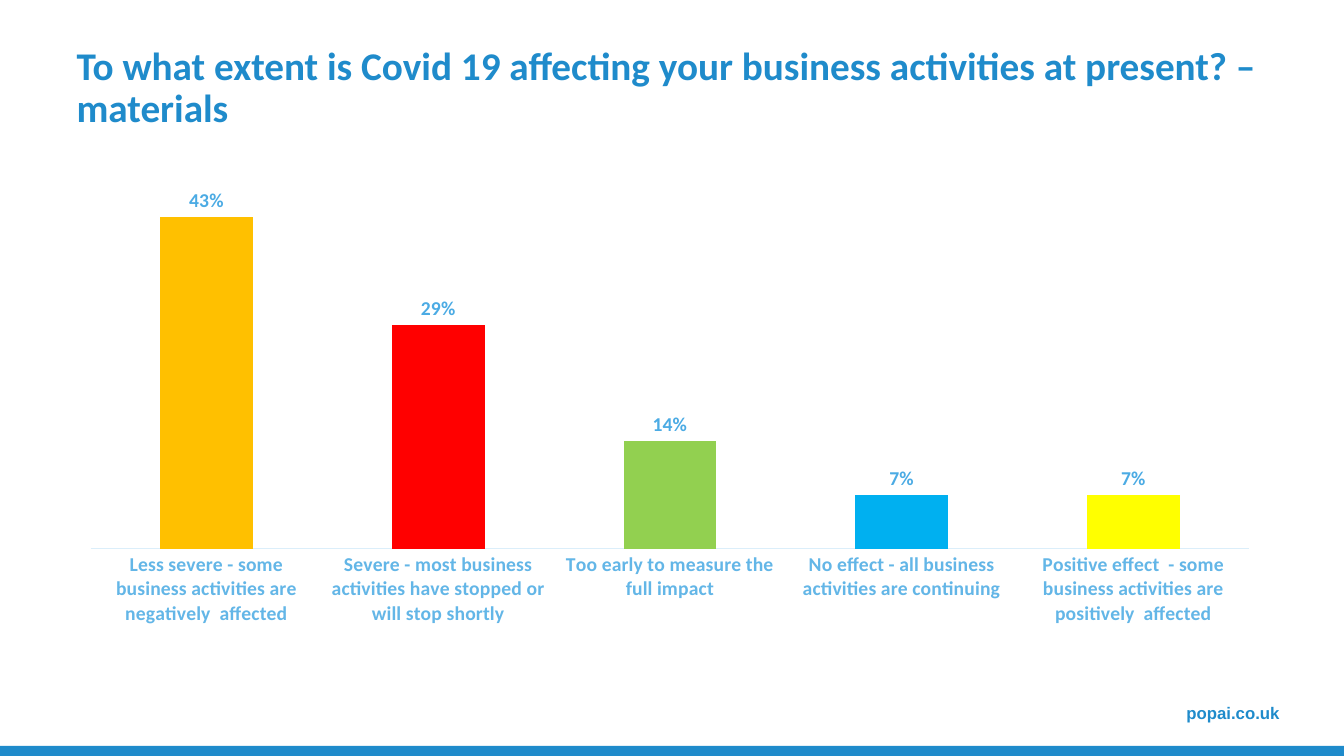
"""Build the slide on how Covid 19 affects business activities."""
from pptx import Presentation
from pptx.chart.data import CategoryChartData
from pptx.dml.color import RGBColor
from pptx.enum.chart import XL_CHART_TYPE, XL_LABEL_POSITION, XL_TICK_MARK
from pptx.enum.shapes import MSO_SHAPE
from pptx.enum.text import MSO_ANCHOR, PP_ALIGN
from pptx.util import Inches, Pt

TITLE = "To what extent is Covid 19 affecting your business activities at present? – materials"
SITE = "popai.co.uk"
DATA = [
    ("Less severe - some business activities are negatively  affected", 0.43, "amber"),
    ("Severe - most business activities have stopped or will stop shortly", 0.29, "red"),
    ("Too early to measure the full impact", 0.14, "green"),
    ("No effect - all business activities are continuing", 0.07, "sky"),
    ("Positive effect  - some business activities are positively  affected", 0.07, "yellow"),
]
COLORS = {
    "brand": "1F8BCB", "axis": "63B6E7", "label": "4BABE4", "line": "DBEEFA",
    "amber": "FFC000", "red": "FF0000", "green": "92D050", "sky": "00B0F0",
    "yellow": "FFFF00",
}
WIDE, HIGH = 13.33, 7.5
LEFT, BAND = 0.66, 0.1


def rgb(name):
    """Return a named colour."""
    return RGBColor.from_string(COLORS[name])


def style(font, size, color, face="Calibri", bold=True):
    """Set size, colour, face and weight of a font."""
    font.size, font.name, font.bold = Pt(size), face, bold
    font.color.rgb = rgb(color)


def paint(fill, color):
    """Give a fill one solid colour."""
    fill.solid()
    fill.fore_color.rgb = rgb(color)


def add_title(slide):
    """Place and format the title."""
    title = slide.shapes.title
    title.left, title.top = Inches(LEFT), Inches(0.41)
    title.width, title.height = Inches(WIDE - LEFT), Inches(0.57)
    frame = title.text_frame
    frame.text, frame.word_wrap = TITLE, True
    frame.vertical_anchor = MSO_ANCHOR.TOP
    para = frame.paragraphs[0]
    para.alignment, para.line_spacing = PP_ALIGN.LEFT, 0.9
    style(para.font, 28, "brand")


def add_bars(slide):
    """Add the column chart."""
    names, values, hues = zip(*DATA)
    data = CategoryChartData(number_format="0%")
    data.categories = names
    data.add_series("Series 1", values)
    chart = slide.shapes.add_chart(
        XL_CHART_TYPE.COLUMN_CLUSTERED, Inches(LEFT), Inches(1.52),
        Inches(11.97), Inches(4.78), data).chart
    chart.has_legend = chart.has_title = False
    style(chart.font, 10, "brand", bold=False)

    value = chart.value_axis
    value.minimum_scale, value.maximum_scale = 0, 0.5
    value.has_major_gridlines = value.visible = False
    axis = chart.category_axis
    axis.major_tick_mark = axis.minor_tick_mark = XL_TICK_MARK.NONE
    axis.format.line.color.rgb, axis.format.line.width = rgb("line"), Pt(0.75)
    style(axis.tick_labels.font, 14, "axis")

    plot = chart.plots[0]
    plot.gap_width, plot.overlap, plot.vary_by_categories = 150, -25, False
    bars = plot.series[0]
    paint(bars.format.fill, "red")
    for i, hue in enumerate(hues):
        paint(bars.points[i].format.fill, hue)
    labels = bars.data_labels
    labels.show_value, labels.position = True, XL_LABEL_POSITION.OUTSIDE_END
    labels.number_format, labels.number_format_is_linked = "0%", False
    style(labels.font, 14, "label")


def add_foot(slide):
    """Add the site address and the band below it."""
    box = slide.shapes.add_textbox(Inches(10.17), Inches(6.92), Inches(2.62), Inches(0.3))
    frame = box.text_frame
    frame.text, frame.word_wrap = SITE, True
    para = frame.paragraphs[0]
    para.alignment = PP_ALIGN.RIGHT
    style(para.font, 12, "brand", "Arial")
    band = slide.shapes.add_shape(
        MSO_SHAPE.RECTANGLE, 0, Inches(HIGH - BAND), Inches(WIDE), Inches(BAND))
    band.shadow.inherit = False
    paint(band.fill, "brand")
    band.line.fill.background()


def main():
    """Build and save the slide."""
    deck = Presentation()
    deck.slide_width, deck.slide_height = Inches(WIDE), Inches(HIGH)
    slide = deck.slides.add_slide(deck.slide_layouts[5])
    add_foot(slide)
    add_bars(slide)
    add_title(slide)
    deck.save("out.pptx")


if __name__ == "__main__":
    main()
